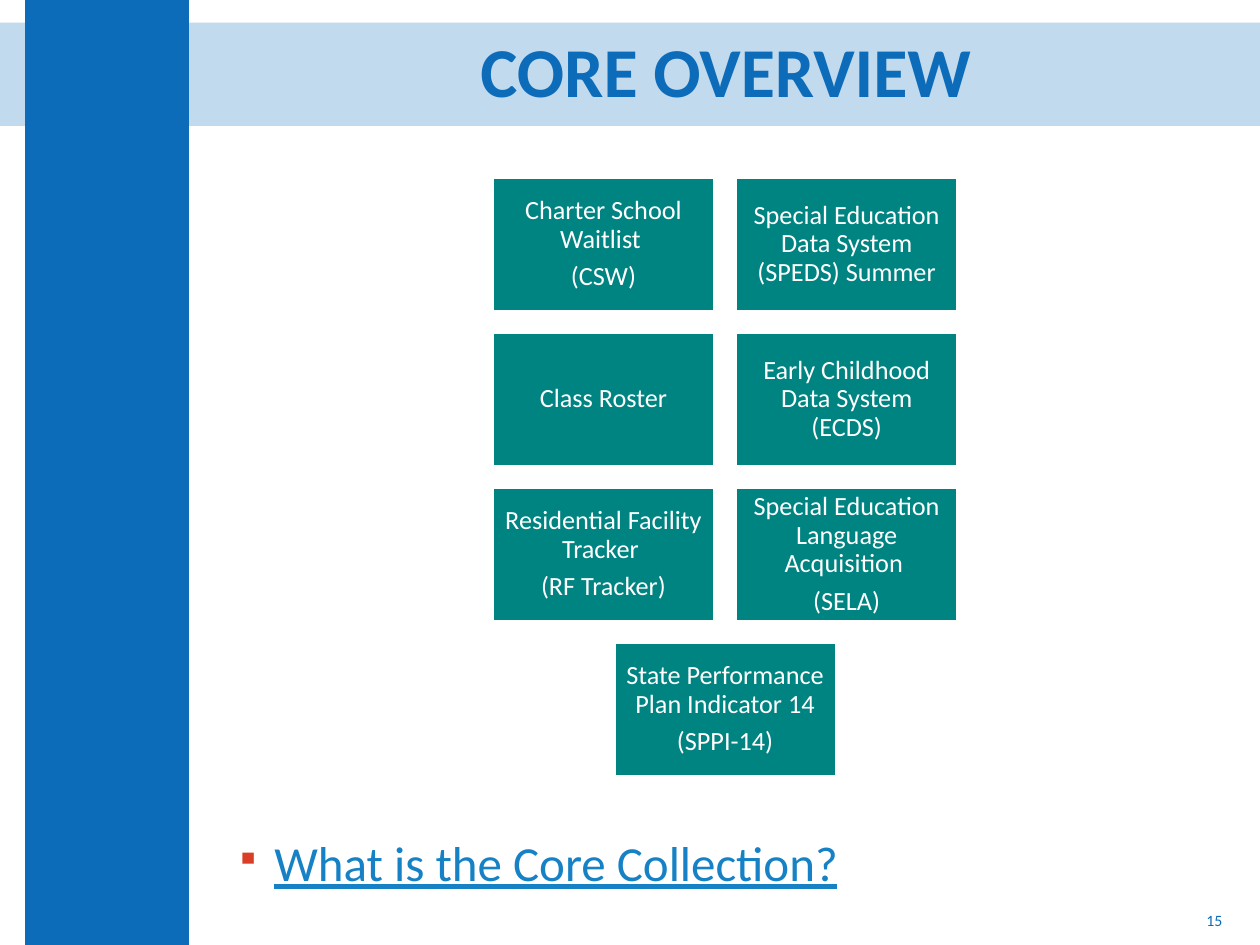
from lxml.etree import SubElement
from pptx import Presentation
from pptx.dml.color import RGBColor
from pptx.enum.shapes import MSO_SHAPE as Shape
from pptx.enum.text import MSO_ANCHOR as Anchor, PP_ALIGN as Align
from pptx.oxml.ns import qn
from pptx.util import Inches, Pt

COLORS = {"blue": "0D6CB9", "teal": "008482", "white": "FFFFFF",
          "link": "1682C5", "bullet": "DA3E26"}

deck = Presentation()
deck.slide_width, deck.slide_height = Inches(10), Inches(7.5)
slide = deck.slides.add_slide(deck.slide_layouts[6])
COL, ROW = deck.slide_width / 100, deck.slide_height / 75


def add_block(left, top, width, height, fill=None):
    block = slide.shapes.add_shape(
        Shape.RECTANGLE, round(left * COL), round(top * ROW),
        round(width * COL), round(height * ROW))
    block.shadow.inherit = False
    block.line.fill.background()
    if fill:
        block.fill.solid()
        block.fill.fore_color.rgb = RGBColor.from_string(COLORS[fill])
    else:
        block.fill.background()
    return block


def write(block, text, size, color, align, spacing=1.0, after=0):
    frame = block.text_frame
    frame.word_wrap = True
    frame.vertical_anchor = Anchor.MIDDLE
    frame.text = text
    for paragraph in frame.paragraphs:
        paragraph.alignment = align
        paragraph.line_spacing = spacing
        paragraph.space_after = Pt(after)
        for run in paragraph.runs:
            run.font.name = "Calibri"
            run.font.size = Pt(size)
            run.font.color.rgb = RGBColor.from_string(COLORS[color])
    return frame


band = add_block(0, 1.8, 100, 8.2, "blue")
band_color = band.fill._xPr.find(qn("a:solidFill"))[0]
SubElement(band_color, qn("a:alpha"), val="25000")
add_block(2, 0, 13, 75, "blue")

page_number = add_block(75.5, 71, 22.5, 4)
write(page_number, "15", 9, "blue", Align.RIGHT)

title = add_block(18.1, 1.8, 79, 8.2)
heading = write(title, "CORE OVERVIEW", 40, "blue", Align.CENTER, 0.9)
heading.paragraphs[0].runs[0].font.bold = True

collections = [
    ["Charter School Waitlist \n(CSW)",
     "Special Education Data System (SPEDS) Summer"],
    ["Class Roster", "Early Childhood Data System (ECDS)"],
    ["Residential Facility Tracker \n(RF Tracker)",
     "Special Education Language Acquisition \n(SELA)"],
    ["State Performance Plan Indicator 14\n(SPPI-14)"],
]
CARD_W, CARD_H, GAP = 17.6, 10.6, 1.7
CENTER, FIRST_TOP = 57.55, 14.1
for row, names in enumerate(collections):
    row_width = len(names) * (CARD_W + GAP) - GAP
    for column, name in enumerate(names):
        card = add_block(CENTER - row_width / 2 + column * (CARD_W + GAP),
                         FIRST_TOP + row * (CARD_H + GAP), CARD_W, CARD_H, "teal")
        card.line.color.rgb = RGBColor.from_string(COLORS["white"])
        card.line.width = Pt(1.5)
        label = write(card, name, 15, "white", Align.CENTER, 0.9, 5.25)
        label.margin_left = label.margin_right = Inches(0.08)
        label.margin_top = label.margin_bottom = Inches(0.08)

question = add_block(17.7, 65.6, 54.8, 5.7, "white")
prompt = write(question, "What is the Core Collection?", 28, "link", Align.LEFT)
prompt.vertical_anchor = Anchor.TOP
prompt.paragraphs[0].runs[0].font.underline = True
bullet = prompt.paragraphs[0]._p.get_or_add_pPr()
bullet.set("marL", str(Inches(0.31)))
bullet.set("indent", str(-Inches(0.31)))
SubElement(SubElement(bullet, qn("a:buClr")), qn("a:srgbClr"), val=COLORS["bullet"])
SubElement(bullet, qn("a:buSzPct"), val="70000")
SubElement(bullet, qn("a:buChar"), char="▪")

deck.save("out.pptx")
